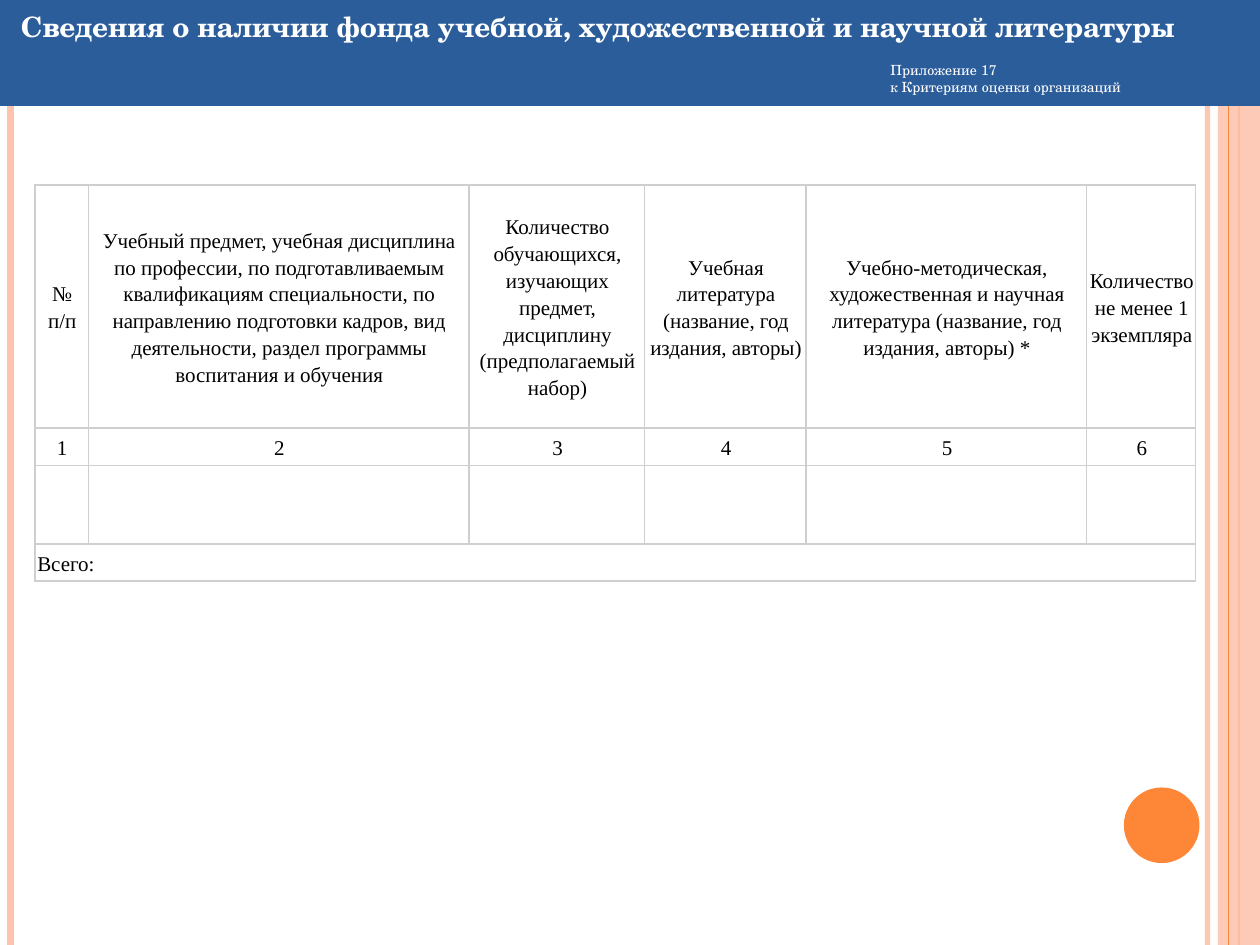
from lxml import etree
from pptx import Presentation
from pptx.dml.color import RGBColor
from pptx.enum.shapes import MSO_CONNECTOR, MSO_SHAPE
from pptx.enum.text import MSO_ANCHOR, PP_ALIGN
from pptx.oxml.ns import qn
from pptx.util import Pt

STRAIGHT = MSO_CONNECTOR.STRAIGHT
RECTANGLE, OVAL = MSO_SHAPE.RECTANGLE, MSO_SHAPE.OVAL
MIDDLE, TOP = MSO_ANCHOR.MIDDLE, MSO_ANCHOR.TOP
LEFT, CENTER, JUSTIFY = PP_ALIGN.LEFT, PP_ALIGN.CENTER, PP_ALIGN.JUSTIFY

SLIDE_WIDTH, SLIDE_HEIGHT = 720, 540
PEACH, ORANGE, BLUE = "FEC3AE", "FE8637", "2C5D9B"
WHITE, BLACK, GRAY = "FFFFFF", "000000", "CFCFCF"
HEADING_FONT, TABLE_FONT = "TeX Gyre Schola", "Times New Roman"

COLUMN_WIDTHS = [30.6, 217.6, 100.3, 92.3, 160.3, 62.3]
ROW_HEIGHTS = [139.1, 21.3, 44.8, 21.4]
HEADERS = [
    "№ п/п",
    "Учебный предмет, учебная дисциплина по профессии, по подготавливаемым "
    "квалификациям специальности, по направлению подготовки кадров, вид "
    "деятельности, раздел программы воспитания и обучения",
    "Количество обучающихся, изучающих предмет, дисциплину (предполагаемый набор)",
    "Учебная литература (название, год издания, авторы)",
    "Учебно-методическая, художественная и научная литература "
    "(название, год издания, авторы) *",
    "Количество не менее 1 экземпляра",
]


def set_color(fill, color, opacity=100):
    fill.solid()
    fill.fore_color.rgb = RGBColor.from_string(color)
    if opacity < 100:
        for element in fill._xPr.iter(qn("a:srgbClr")):
            etree.SubElement(element, qn("a:alpha"), val=str(opacity * 1000))


def add_stripe(slide, x, color, width, opacity=100):
    connector = slide.shapes.add_connector(STRAIGHT, Pt(x), 0, Pt(x), Pt(SLIDE_HEIGHT))
    connector.line.width = Pt(width)
    set_color(connector.line.fill, color, opacity)
    etree.SubElement(connector._element.spPr, qn("a:effectLst"))


def add_block(slide, kind, box, color, opacity=100):
    shape = slide.shapes.add_shape(kind, *map(Pt, box))
    shape.shadow.inherit = False
    shape.line.fill.background()
    set_color(shape.fill, color, opacity)


def format_text(text_frame, font_name, size, color, alignment=LEFT, bold=False):
    for paragraph in text_frame.paragraphs:
        paragraph.alignment = alignment
        for run in paragraph.runs:
            run.font.name = font_name
            run.font.size = Pt(size)
            run.font.bold = bold
            set_color(run.font.fill, color)


def add_title(slide, text, box):
    title = slide.shapes.title
    slide.shapes._spTree.append(title._element)
    title.left, title.top, title.width, title.height = map(Pt, box)
    title.text_frame.text = text
    title.text_frame.word_wrap = True
    title.text_frame.vertical_anchor = MIDDLE
    format_text(title.text_frame, HEADING_FONT, 16, WHITE, bold=True)


def add_note(slide, text, box):
    text_frame = slide.shapes.add_textbox(*map(Pt, box)).text_frame
    text_frame.word_wrap = True
    text_frame.vertical_anchor = TOP
    text_frame.text = text
    format_text(text_frame, HEADING_FONT, 8, WHITE)


def set_borders(cell, color, width):
    properties = cell._tc.get_or_add_tcPr()
    for index, side in enumerate(("a:lnL", "a:lnR", "a:lnT", "a:lnB")):
        line = etree.Element(qn(side), w=str(Pt(width)))
        fill = etree.SubElement(line, qn("a:solidFill"))
        etree.SubElement(fill, qn("a:srgbClr"), val=color)
        properties.insert(index, line)


def fill_cell(cell, text, alignment):
    cell.vertical_anchor = MIDDLE
    cell.margin_left = cell.margin_right = Pt(0.7)
    cell.margin_top = cell.margin_bottom = Pt(0.7)
    cell.text_frame.text = text
    format_text(cell.text_frame, TABLE_FONT, 12, BLACK, alignment)
    paragraph = cell.text_frame.paragraphs[0]
    paragraph.line_spacing = 1.15
    paragraph.space_after = Pt(1)
    properties = paragraph._p.get_or_add_pPr()
    properties.set("marL", str(Pt(0.7)))
    properties.set("indent", "0")


def add_literature_table(slide, left, top):
    table = slide.shapes.add_table(
        len(ROW_HEIGHTS), len(COLUMN_WIDTHS), Pt(left), Pt(top),
        Pt(sum(COLUMN_WIDTHS)), Pt(sum(ROW_HEIGHTS)),
    ).table
    table.first_row = table.horz_banding = False
    for column, width in zip(table.columns, COLUMN_WIDTHS):
        column.width = Pt(width)
    for row, height in zip(table.rows, ROW_HEIGHTS):
        row.height = Pt(height)
    for cell in table.iter_cells():
        cell.fill.background()
        set_borders(cell, GRAY, 1)
    for index, header in enumerate(HEADERS):
        fill_cell(table.cell(0, index), header, CENTER)
        fill_cell(table.cell(1, index), str(index + 1), CENTER)
    total = table.cell(3, 0)
    total.merge(table.cell(3, len(HEADERS) - 1))
    fill_cell(total, "Всего:", JUSTIFY)


def main():
    presentation = Presentation()
    presentation.slide_width = Pt(SLIDE_WIDTH)
    presentation.slide_height = Pt(SLIDE_HEIGHT)
    slide = presentation.slides.add_slide(presentation.slide_layouts[5])
    set_color(slide.background.fill, WHITE)

    add_stripe(slide, 690, PEACH, 3, 93)
    add_stripe(slide, 6, PEACH, 4.5)
    add_stripe(slide, 708, ORANGE, 1.5)
    add_block(slide, RECTANGLE, (696, 0, 24, SLIDE_HEIGHT), PEACH, 87)
    add_stripe(slide, 702, ORANGE, 0.75)
    add_block(slide, OVAL, (642.24, 450, 43.2, 43.2), ORANGE)
    add_block(slide, RECTANGLE, (0, 0, SLIDE_WIDTH, 60.5), BLUE)

    add_note(slide, "Приложение 17\vк Критериям оценки организаций", (501.8, 31.7, 180, 26.6))
    add_title(
        slide,
        "Сведения о наличии фонда учебной, художественной и научной литературы",
        (4.8, 1, 695, 28),
    )
    add_literature_table(slide, 19.9, 105.6)
    presentation.save("out.pptx")


if __name__ == "__main__":
    main()
